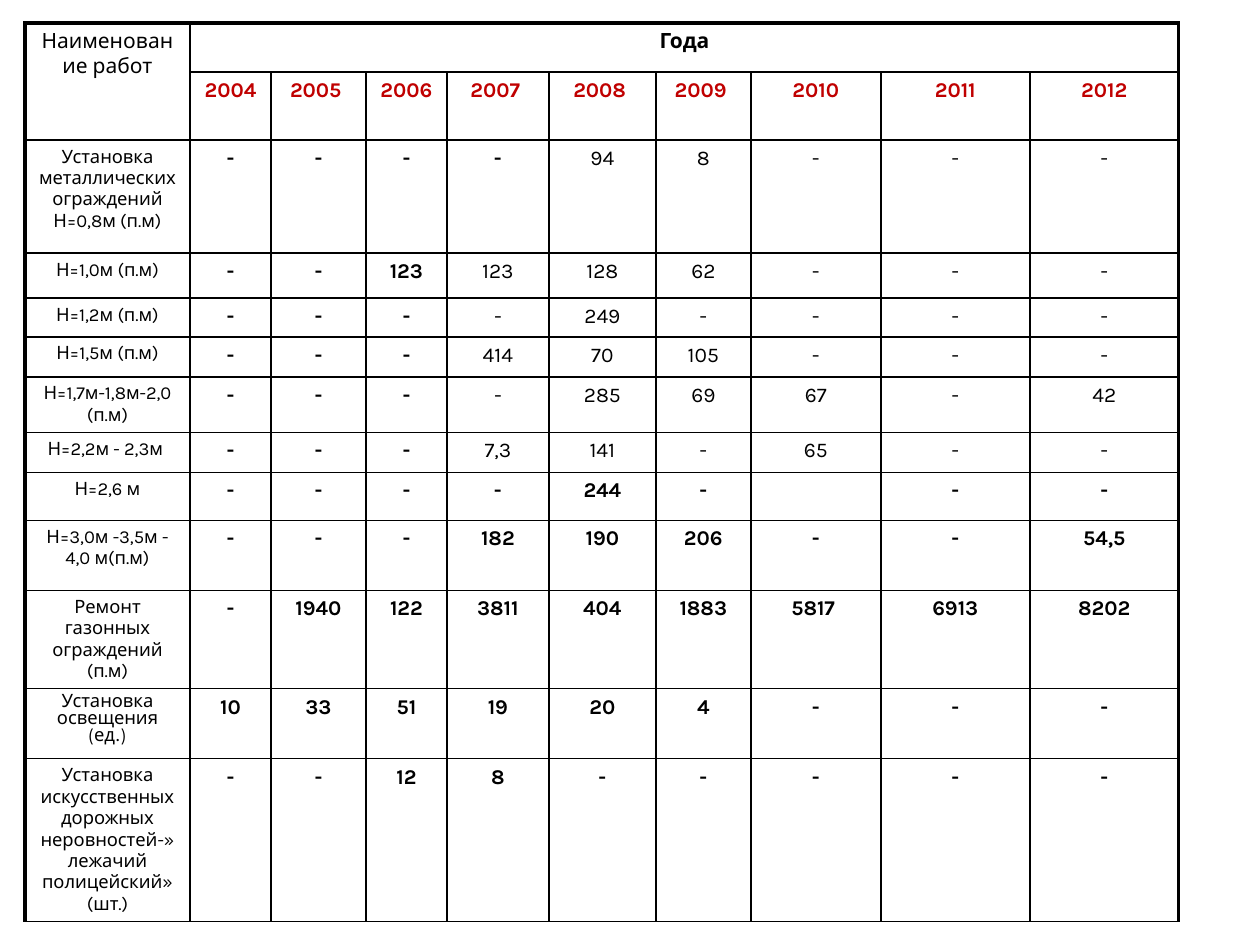
"""Build a slide with a table of yearly landscaping works."""
from dataclasses import dataclass

from lxml import etree
from pptx import Presentation
from pptx.dml.color import RGBColor
from pptx.enum.text import PP_ALIGN
from pptx.oxml.ns import qn
from pptx.table import Table, _Cell
from pptx.util import Pt

EMU_PER_PX = 914400 // 126
CENTER = PP_ALIGN.CENTER
COLORS = {"text": "000000", "year": "C00000", "border": "000000"}
BODY_FONT = "Karla"
LIGHTING_FONT = "League Spartan"
THIN, THICK = 1, 2.25

TABLE_LEFT, TABLE_TOP = 25, 23
COLUMN_WIDTHS = [165, 81, 95, 81, 102, 107, 95, 130, 149, 149]
HEADER_HEIGHTS = [49, 68]
YEARS = ["2004 ", "2005 ", "2006 ", "2007 ", "2008 ", "2009 ", "2010", "2011", "2012"]


@dataclass(frozen=True)
class Work:
    name: str
    height: int
    values: list[str]
    bold_count: int = 9
    name_font: str = BODY_FONT


WORKS = [
    Work("Установка металлических ограждений Н=0,8м (п.м)", 113,
         ["-", "-", "-", "-", "94", "8", "-", "-", "-"], 4),
    Work("Н=1,0м (п.м)", 45, ["-", "-", "123", "123", "128", "62", "-", "-", "-"], 3),
    Work("Н=1,2м (п.м)", 39, ["-", "-", "-", "-", "249", "-", "-", "-", "-"], 3),
    Work("Н=1,5м (п.м)", 40, ["-", "-", "-", "414", "70", "105", "-", "-", "-"], 3),
    Work("Н=1,7м-1,8м-2,0 (п.м)", 55,
         ["-", "-", "-", "-", "285", "69", "67", "-", "42"], 3),
    Work("Н=2,2м - 2,3м ", 40, ["-", "-", "-", "7,3", "141", "-", "65", "-", "-"], 3),
    Work("Н=2,6 м", 39, ["-", "-", "-", "-", "244", "-", "", "-", "-"]),
    Work("Н=3,0м -3,5м - 4,0 м(п.м)", 70,
         ["-", "-", "-", "182", "190", "206", "-", "-", "54,5"]),
    Work("Ремонт газонных ограждений (п.м)", 98,
         ["-", "1940", "122", "3811", "404", "1883", "5817 ", "6913", "8202"]),
    Work("Установка освещения (ед.)", 70,
         ["10", "33", "51", "19", "20", "4", "-", "-", "-"], name_font=LIGHTING_FONT),
    Work("Установка искусственных дорожных неровностей-»лежачий полицейский» (шт.)", 163,
         ["-", "-", "12", "8", "-", "-", "-", "-", "-"]),
]


def px(length: int) -> int:
    return length * EMU_PER_PX


def write_text(cell: _Cell, text: str, *, size: float = 12, bold: bool = False,
               color: str = "text", font: str = BODY_FONT) -> None:
    paragraph = cell.text_frame.paragraphs[0]
    paragraph.alignment = CENTER
    run = paragraph.add_run()
    run.text = text
    run.font.size = Pt(size)
    run.font.bold = bold
    run.font.name = font
    run.font.color.rgb = RGBColor.from_string(COLORS[color])


def draw_borders(cell: _Cell, row: int, column: int) -> None:
    last_column = column + (cell.span_width if cell.is_merge_origin else 1)
    widths = {
        "a:lnL": THICK if column == 0 else THIN,
        "a:lnR": THICK if last_column == len(COLUMN_WIDTHS) else THIN,
        "a:lnT": THICK if row == 0 else THIN,
        "a:lnB": THIN,
    }
    properties = cell._tc.get_or_add_tcPr()
    for index, (tag, width) in enumerate(widths.items()):
        line = etree.Element(qn(tag), w=str(Pt(width)))
        fill = etree.SubElement(line, qn("a:solidFill"))
        etree.SubElement(fill, qn("a:srgbClr"), val=COLORS["border"])
        properties.insert(index, line)


def format_cells(table: Table) -> None:
    for row_index, row in enumerate(table.rows):
        for column_index, cell in enumerate(row.cells):
            cell.margin_left = cell.margin_right = Pt(7.2)
            cell.margin_top = cell.margin_bottom = Pt(3.6)
            cell.fill.background()
            draw_borders(cell, row_index, column_index)


def write_header(table: Table) -> None:
    table.cell(0, 0).merge(table.cell(1, 0))
    table.cell(0, 1).merge(table.cell(0, len(YEARS)))
    write_text(table.cell(0, 0), "Наименование работ")
    write_text(table.cell(0, 1), "Года", bold=True)
    for column, year in enumerate(YEARS, start=1):
        write_text(table.cell(1, column), year, bold=True, color="year")


def write_work(table: Table, row: int, work: Work) -> None:
    write_text(table.cell(row, 0), work.name, size=10.5, font=work.name_font)
    for column, value in enumerate(work.values, start=1):
        write_text(table.cell(row, column), value, bold=column <= work.bold_count)


def main() -> None:
    presentation = Presentation()
    presentation.slide_width, presentation.slide_height = px(1260), px(945)
    slide = presentation.slides.add_slide(presentation.slide_layouts.get_by_name("Blank"))
    heights = HEADER_HEIGHTS + [work.height for work in WORKS]
    table = slide.shapes.add_table(
        len(heights), len(COLUMN_WIDTHS), px(TABLE_LEFT), px(TABLE_TOP),
        px(sum(COLUMN_WIDTHS)), px(sum(heights))).table
    table.first_row = table.horz_banding = False
    for column, width in zip(table.columns, COLUMN_WIDTHS):
        column.width = px(width)
    for row, height in zip(table.rows, heights):
        row.height = px(height)
    write_header(table)
    for row_index, work in enumerate(WORKS, start=len(HEADER_HEIGHTS)):
        write_work(table, row_index, work)
    format_cells(table)
    presentation.save("out.pptx")


if __name__ == "__main__":
    main()
